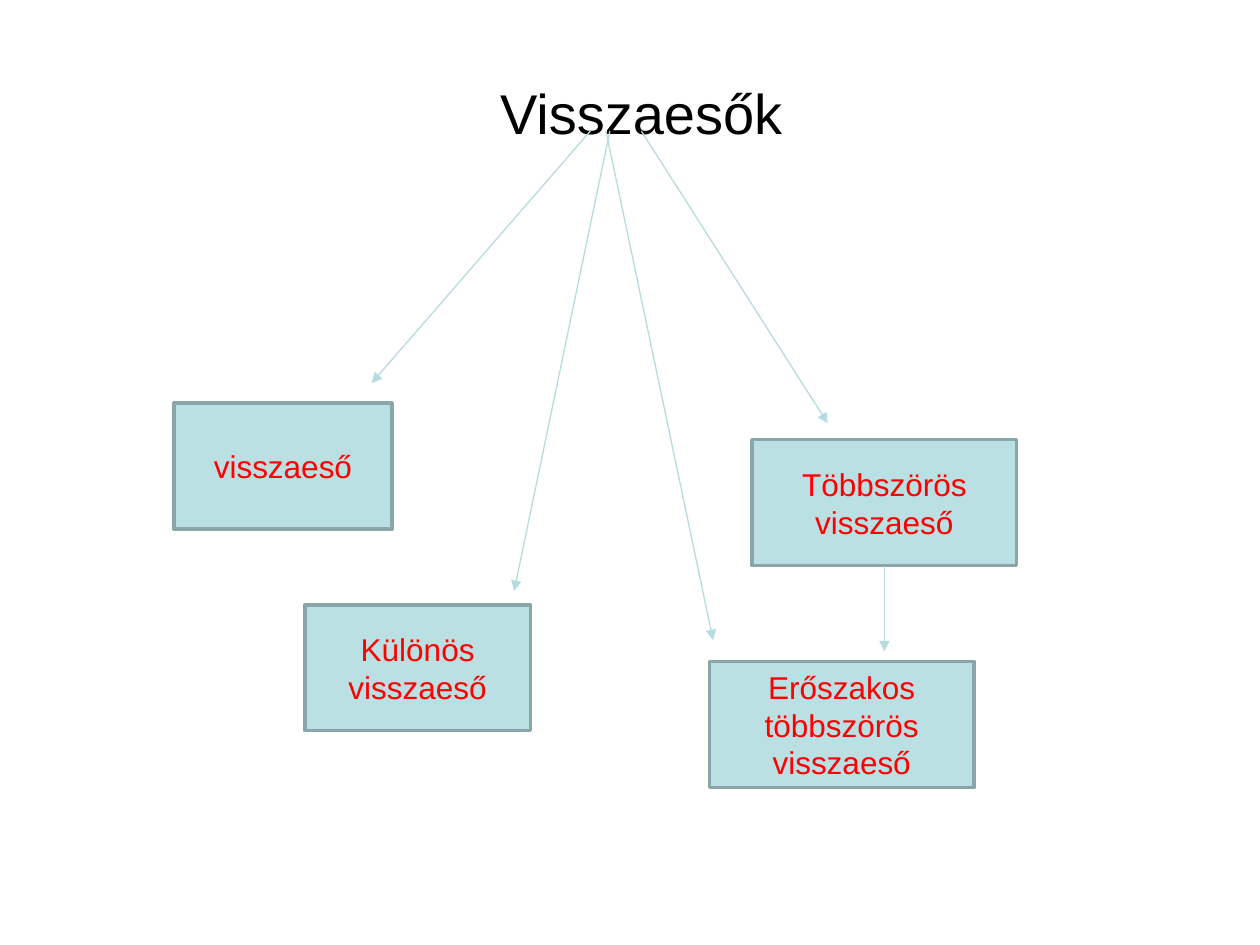
from lxml import etree
from pptx import Presentation
from pptx.dml.color import RGBColor
from pptx.enum.shapes import MSO_CONNECTOR, MSO_SHAPE
from pptx.enum.text import MSO_ANCHOR, PP_ALIGN
from pptx.oxml.ns import qn
from pptx.util import Pt

RECTANGLE = MSO_SHAPE.RECTANGLE
STRAIGHT = MSO_CONNECTOR.STRAIGHT
CENTER = PP_ALIGN.CENTER
TOP = MSO_ANCHOR.TOP
MIDDLE = MSO_ANCHOR.MIDDLE

COLORS = {
    "title": "000000",
    "label": "FF0000",
    "fill": "BBE0E3",
    "border": "8AA6A8",
    "arrow": "B6DCDF",
}
FONT = "Arial"
CATEGORY_HEIGHT = 72
ARROW_START_Y = 74.9

CATEGORIES = [
    ("visszaeső", 99.4, 230.4, 124.6),
    ("Különös visszaeső", 174.2, 345.6, 128.9),
    ("Többszörös visszaeső", 429.8, 251.3, 151.2),
    ("Erőszakos többszörös visszaeső", 405.4, 378, 151.2),
]
TITLE_ARROWS = [
    (337.3, 212.4, 218.9),
    (366.5, 473, 241.9),
    (348.5, 293.8, 337.7),
    (346.3, 407.5, 365.8),
]
ESCALATION_ARROW = (505.4, 323.3, 505.4, 372.2)


def color(name):
    return RGBColor.from_string(COLORS[name])


def write_text(shape, text, size, color_name, anchor):
    frame = shape.text_frame
    frame.word_wrap = True
    frame.vertical_anchor = anchor
    frame.text = text
    paragraph = frame.paragraphs[0]
    paragraph.alignment = CENTER
    font = paragraph.runs[0].font
    font.name = FONT
    font.size = Pt(size)
    font.color.rgb = color(color_name)


def add_title(slide):
    title = slide.shapes.add_textbox(Pt(42.5), Pt(37.4), Pt(648), Pt(427.7))
    write_text(title, "Visszaesők", 32, "title", TOP)
    title.text_frame.margin_top = Pt(7.5)


def add_category(slide, label, left, top, width):
    category = slide.shapes.add_shape(
        RECTANGLE, Pt(left), Pt(top), Pt(width), Pt(CATEGORY_HEIGHT)
    )
    category.shadow.inherit = False
    category.fill.solid()
    category.fill.fore_color.rgb = color("fill")
    category.line.color.rgb = color("border")
    category.line.width = Pt(2)
    write_text(category, label, 18, "label", MIDDLE)


def add_arrow(slide, start_x, start_y, end_x, end_y):
    arrow = slide.shapes.add_connector(
        STRAIGHT, Pt(start_x), Pt(start_y), Pt(end_x), Pt(end_y)
    )
    arrow.line.color.rgb = color("arrow")
    arrow.line.width = Pt(0.75)
    properties = arrow.line._get_or_add_ln()
    etree.SubElement(properties, qn("a:tailEnd"), type="triangle")
    etree.SubElement(properties.getparent(), qn("a:effectLst"))


def main():
    presentation = Presentation()
    presentation.slide_width = Pt(720)
    presentation.slide_height = Pt(540)
    slide = presentation.slides.add_slide(presentation.slide_layouts[6])

    add_title(slide)
    for category in CATEGORIES:
        add_category(slide, *category)
    for start_x, end_x, end_y in TITLE_ARROWS:
        add_arrow(slide, start_x, ARROW_START_Y, end_x, end_y)
    add_arrow(slide, *ESCALATION_ARROW)

    presentation.save("out.pptx")


if __name__ == "__main__":
    main()
